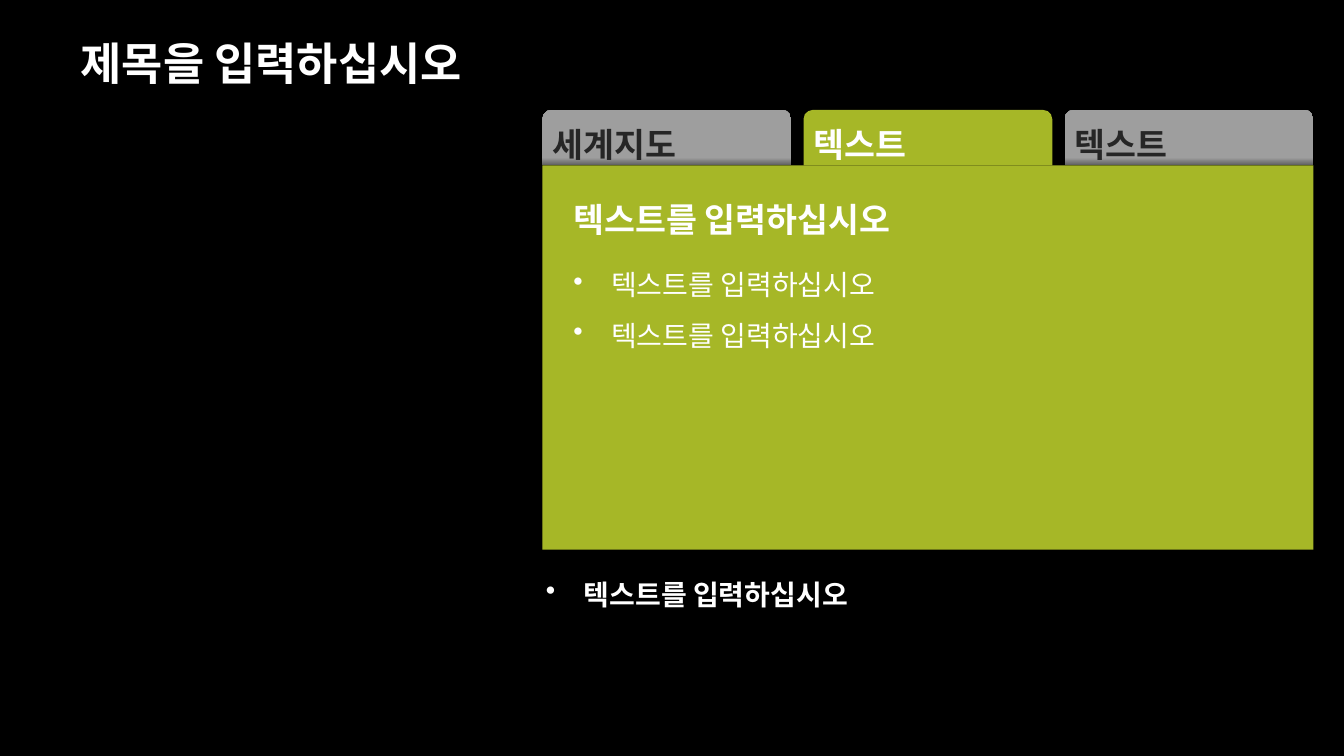
"""Build a slide with a tabbed text panel on a black background."""
import pptx
import pptx.dml.color
import pptx.enum.shapes
import pptx.enum.text
import pptx.oxml
import pptx.util
from pptx.util import Cm

COLOURS = {"black": "000000", "white": "FFFFFF", "ink": "262626",
           "green": "A6B727", "grey": "9E9E9E", "shade": "5C5C5C"}
SHAPES = pptx.enum.shapes.MSO_SHAPE
BULLET = ('<a:buChar xmlns:a="http://schemas.openxmlformats.org/'
          'drawingml/2006/main" char="•"/>')
PROMPT = "텍스트를 입력하십시오"


def colour(name):
    return pptx.dml.color.RGBColor.from_string(COLOURS[name])


class Page:
    """Hold the style and the current slide."""

    def __init__(self, deck, font="Calibri"):
        self.font = font
        self.slide = deck.slides.add_slide(deck.slide_layouts[5])
        background = self.slide.background.fill
        background.solid()
        background.fore_color.rgb = colour("black")

    def style(self, para, size, ink, bold, spacing):
        para.alignment = pptx.enum.text.PP_ALIGN.LEFT
        para.line_spacing = spacing
        para.font.name = self.font
        para.font.size = pptx.util.Pt(size)
        para.font.bold = bold
        para.font.color.rgb = colour(ink)

    def title(self, text, left, top, width, height):
        box = self.slide.shapes.title
        box.left, box.top, box.width, box.height = map(Cm, (left, top, width, height))
        frame = box.text_frame
        frame.text = text
        frame.auto_size = pptx.enum.text.MSO_AUTO_SIZE.NONE
        frame.vertical_anchor = pptx.enum.text.MSO_ANCHOR.MIDDLE
        self.style(frame.paragraphs[0], 32, "white", True, 0.9)

    def block(self, kind, left, top, width, height, shaded=False):
        box = self.slide.shapes.add_shape(kind, *map(Cm, (left, top, width, height)))
        box.shadow.inherit = False
        box.line.fill.background()
        if shaded:
            box.fill.gradient()
            box.fill.gradient_angle = 90
            stops = zip(box.fill.gradient_stops, ("shade", "grey"), (0, 0.14))
            for stop, name, position in stops:
                stop.color.rgb = colour(name)
                stop.position = position
        else:
            box.fill.solid()
            box.fill.fore_color.rgb = colour("green")

    def text(self, lines, left, top, width, height, size=24, ink="white",
             bold=True, bullets=False, wrap=True):
        box = self.slide.shapes.add_textbox(*map(Cm, (left, top, width, height)))
        frame = box.text_frame
        frame.word_wrap = wrap
        frame.auto_size = pptx.enum.text.MSO_AUTO_SIZE.SHAPE_TO_FIT_TEXT
        frame.text = "\n".join(lines)
        for para in frame.paragraphs:
            self.style(para, size, ink, bold, 1.5)
            if bullets:
                properties = para._p.get_or_add_pPr()
                properties.set("marL", str(Cm(0.95)))
                properties.set("indent", str(-Cm(0.95)))
                bullet = pptx.oxml.parse_xml(BULLET)
                properties.insert_element_before(bullet, "a:tabLst", "a:defRPr", "a:extLst")


def main():
    deck = pptx.Presentation()
    deck.slide_width, deck.slide_height = Cm(33.87), Cm(19.05)
    page = Page(deck)
    page.title("제목을 입력하십시오", 1.78, 0.51, 30.23, 2.29)

    left, pitch, tab_width = 13.67, 6.58, 6.27
    tabs = [("세계지도", 3.94, False), ("텍스트", 3.07, True), ("텍스트", 3.07, False)]
    for index, (label, label_width, active) in enumerate(tabs):
        tab_left = left + index * pitch
        page.block(SHAPES.ROUND_2_SAME_RECTANGLE, tab_left, 2.77, tab_width, 1.4,
                   shaded=not active)
        page.text([label], tab_left, 2.49, label_width, 1.63,
                  ink="white" if active else "ink", wrap=False)

    page.block(SHAPES.RECTANGLE, left, 4.17, 2 * pitch + tab_width, 9.68)
    page.text([PROMPT], 14.2, 4.39, 12.65, 1.63)
    page.text([PROMPT] * 2, 14.2, 6.2, 12.65, 3.96, size=20, bold=False, bullets=True)
    page.text([PROMPT], 13.51, 14, 19.38, 1.4, size=20, bullets=True)
    deck.save("out.pptx")


if __name__ == "__main__":
    main()
